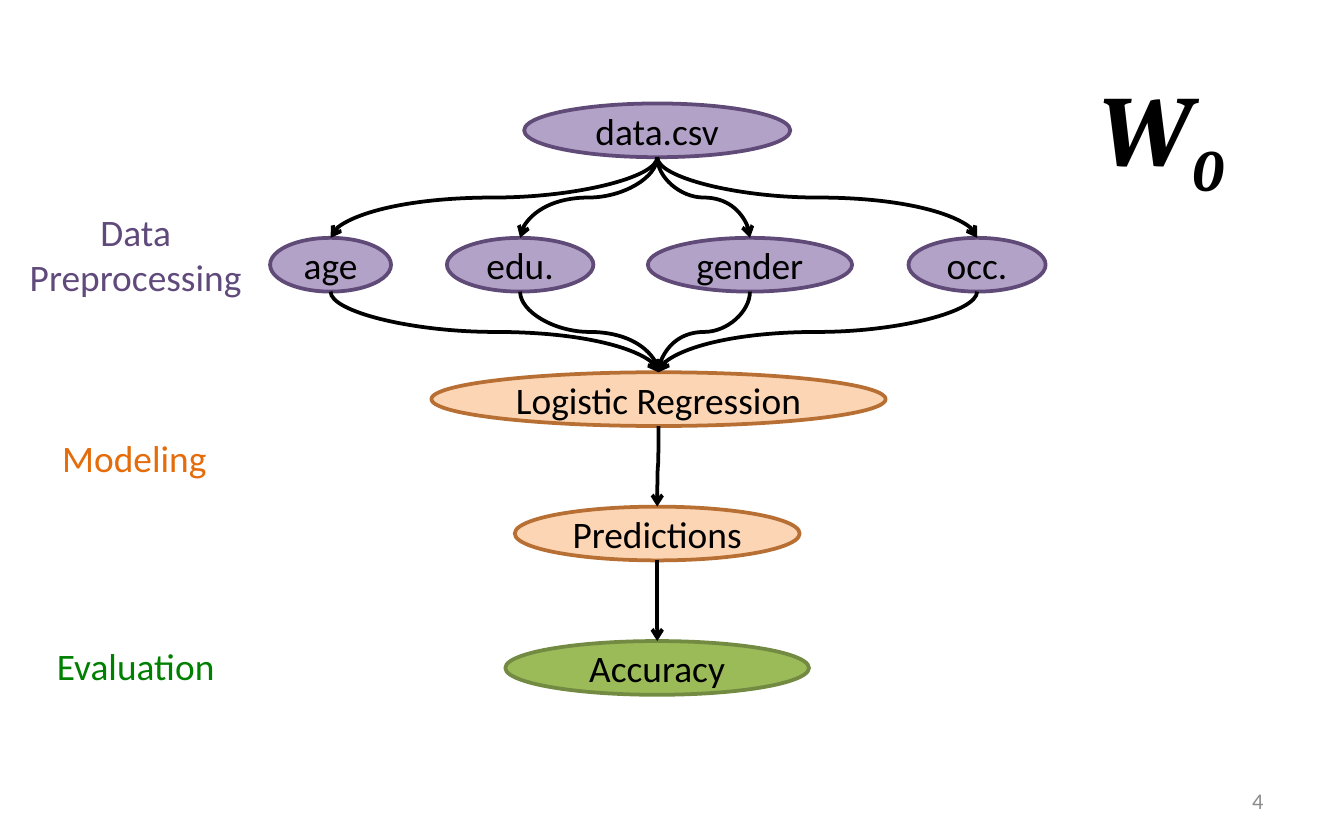
from dataclasses import dataclass

from pptx import Presentation
from pptx.dml.color import RGBColor
from pptx.enum.shapes import MSO_CONNECTOR, MSO_SHAPE
from pptx.enum.text import MSO_ANCHOR, MSO_AUTO_SIZE, PP_ALIGN
from pptx.oxml.ns import qn
from pptx.shapes.autoshape import Shape
from pptx.slide import Slide
from pptx.text.text import _Paragraph
from pptx.util import Inches, Pt
from lxml import etree

CURVE = MSO_CONNECTOR.CURVE
ELLIPSE = MSO_SHAPE.OVAL
MIDDLE = MSO_ANCHOR.MIDDLE
FIT_SHAPE = MSO_AUTO_SIZE.SHAPE_TO_FIT_TEXT
LEFT, CENTER, RIGHT = PP_ALIGN.LEFT, PP_ALIGN.CENTER, PP_ALIGN.RIGHT

BLACK = RGBColor(0x00, 0x00, 0x00)
GRAY = RGBColor(0x8C, 0x8C, 0x8C)
PURPLE_TEXT = RGBColor(0x60, 0x4A, 0x7B)
ORANGE_TEXT = RGBColor(0xE4, 0x6C, 0x0A)
GREEN_TEXT = RGBColor(0x00, 0x80, 0x00)
PURPLE, PURPLE_LINE = RGBColor(0xB3, 0xA2, 0xC7), RGBColor(0x5F, 0x4A, 0x78)
ORANGE, ORANGE_LINE = RGBColor(0xFC, 0xD5, 0xB5), RGBColor(0xB7, 0x6F, 0x34)
GREEN, GREEN_LINE = RGBColor(0x9B, 0xBB, 0x59), RGBColor(0x73, 0x8A, 0x42)

NODE_HEIGHT = 0.4
FIRST_ROW_TOP = 0.77
ROW_STEP = 1.0
AXIS = 4.89


@dataclass(frozen=True)
class Node:
    text: str
    center: float
    row: int
    width: float
    fill: RGBColor
    outline: RGBColor

    @property
    def top(self) -> float:
        return FIRST_ROW_TOP + self.row * ROW_STEP

    @property
    def bottom(self) -> float:
        return self.top + NODE_HEIGHT


@dataclass(frozen=True)
class Label:
    lines: tuple[str, ...]
    left: float
    top: float
    width: float
    height: float
    color: RGBColor


SOURCE = Node("data.csv", AXIS, 0, 1.98, PURPLE, PURPLE_LINE)
FEATURES = [
    Node("age", 2.46, 1, 0.9, PURPLE, PURPLE_LINE),
    Node("edu.", 3.87, 1, 1.09, PURPLE, PURPLE_LINE),
    Node("gender", 5.58, 1, 1.52, PURPLE, PURPLE_LINE),
    Node("occ.", 7.27, 1, 1.02, PURPLE, PURPLE_LINE),
]
MODEL = Node("Logistic Regression", AXIS + 0.01, 2, 3.38, ORANGE, ORANGE_LINE)
PREDICTIONS = Node("Predictions", AXIS, 3, 2.12, ORANGE, ORANGE_LINE)
ACCURACY = Node("Accuracy", AXIS, 4, 2.26, GREEN, GREEN_LINE)

LABELS = [
    Label(("Data", "Preprocessing"), 0.11, 1.51, 1.8, 0.77, PURPLE_TEXT),
    Label(("Modeling",), 0.36, 3.19, 1.28, 0.44, ORANGE_TEXT),
    Label(("Evaluation",), 0.31, 4.74, 1.4, 0.44, GREEN_TEXT),
]


def add_run(paragraph: _Paragraph, text: str, size: float, color: RGBColor,
            font_name: str = "Calibri"):
    run = paragraph.add_run()
    run.text = text
    run.font.size = Pt(size)
    run.font.name = font_name
    run.font.color.rgb = color
    return run


def add_text_box(slide: Slide, left: float, top: float, width: float,
                 height: float, wrap: bool = True) -> Shape:
    box = slide.shapes.add_textbox(Inches(left), Inches(top), Inches(width), Inches(height))
    box.text_frame.word_wrap = wrap
    return box


def add_label(slide: Slide, label: Label) -> None:
    frame = add_text_box(slide, label.left, label.top, label.width, label.height,
                         wrap=False).text_frame
    frame.auto_size = FIT_SHAPE
    for index, line in enumerate(label.lines):
        paragraph = frame.add_paragraph() if index else frame.paragraphs[0]
        paragraph.alignment = CENTER
        add_run(paragraph, line, 20, label.color)


def add_node(slide: Slide, node: Node) -> None:
    shape = slide.shapes.add_shape(
        ELLIPSE, Inches(node.center - node.width / 2), Inches(node.top),
        Inches(node.width), Inches(NODE_HEIGHT))
    shape.shadow.inherit = False
    shape.fill.solid()
    shape.fill.fore_color.rgb = node.fill
    shape.line.color.rgb = node.outline
    shape.line.width = Pt(2)
    frame = shape.text_frame
    frame.word_wrap = False
    frame.vertical_anchor = MIDDLE
    paragraph = frame.paragraphs[0]
    paragraph.alignment = CENTER
    add_run(paragraph, node.text, 20, BLACK)


def add_arrow(slide: Slide, start: Node, end: Node) -> None:
    """Curve from the bottom of start to the top of end.

    The preset curve runs sideways, so it is laid out flat around its
    centre and turned a quarter to leave and arrive vertically.
    """
    center_x = (start.center + end.center) / 2
    center_y = (start.bottom + end.top) / 2
    half_run = (end.top - start.bottom) / 2
    half_rise = abs(end.center - start.center) / 2
    goes_right = end.center > start.center
    side = 1 if goes_right else -1
    connector = slide.shapes.add_connector(
        CURVE,
        Inches(center_x + side * half_run), Inches(center_y - half_rise),
        Inches(center_x - side * half_run), Inches(center_y + half_rise))
    connector.rotation = 270 if goes_right else 90
    connector.line.color.rgb = BLACK
    connector.line.width = Pt(2)
    line = connector.line._get_or_add_ln()
    etree.SubElement(line, qn("a:tailEnd"), type="arrow")
    etree.SubElement(connector._element.spPr, qn("a:effectLst"))


def add_version_symbol(slide: Slide) -> None:
    frame = add_text_box(slide, 8.08, 0.44, 1.3, 1.01).text_frame
    frame.auto_size = FIT_SHAPE
    paragraph = frame.paragraphs[0]
    paragraph.alignment = LEFT
    for text in ("W", "0"):
        run = add_run(paragraph, text, 54, BLACK, "Cambria")
        run.font.bold = True
        run.font.italic = True
    run.font._element.set("baseline", "-25000")


def add_slide_number(slide: Slide) -> None:
    frame = add_text_box(slide, 7.17, 5.79, 2.33, 0.33).text_frame
    frame.vertical_anchor = MIDDLE
    paragraph = frame.paragraphs[0]
    paragraph.alignment = RIGHT
    add_run(paragraph, "4", 12, GRAY)


def main() -> None:
    presentation = Presentation()
    presentation.slide_width = Inches(10)
    presentation.slide_height = Inches(6.25)
    slide = presentation.slides.add_slide(presentation.slide_layouts[6])

    for label in LABELS:
        add_label(slide, label)
    add_version_symbol(slide)
    for node in (SOURCE, *FEATURES, MODEL, PREDICTIONS, ACCURACY):
        add_node(slide, node)
    for feature in FEATURES:
        add_arrow(slide, SOURCE, feature)
        add_arrow(slide, feature, MODEL)
    add_arrow(slide, MODEL, PREDICTIONS)
    add_arrow(slide, PREDICTIONS, ACCURACY)
    add_slide_number(slide)

    presentation.save("out.pptx")


if __name__ == "__main__":
    main()
